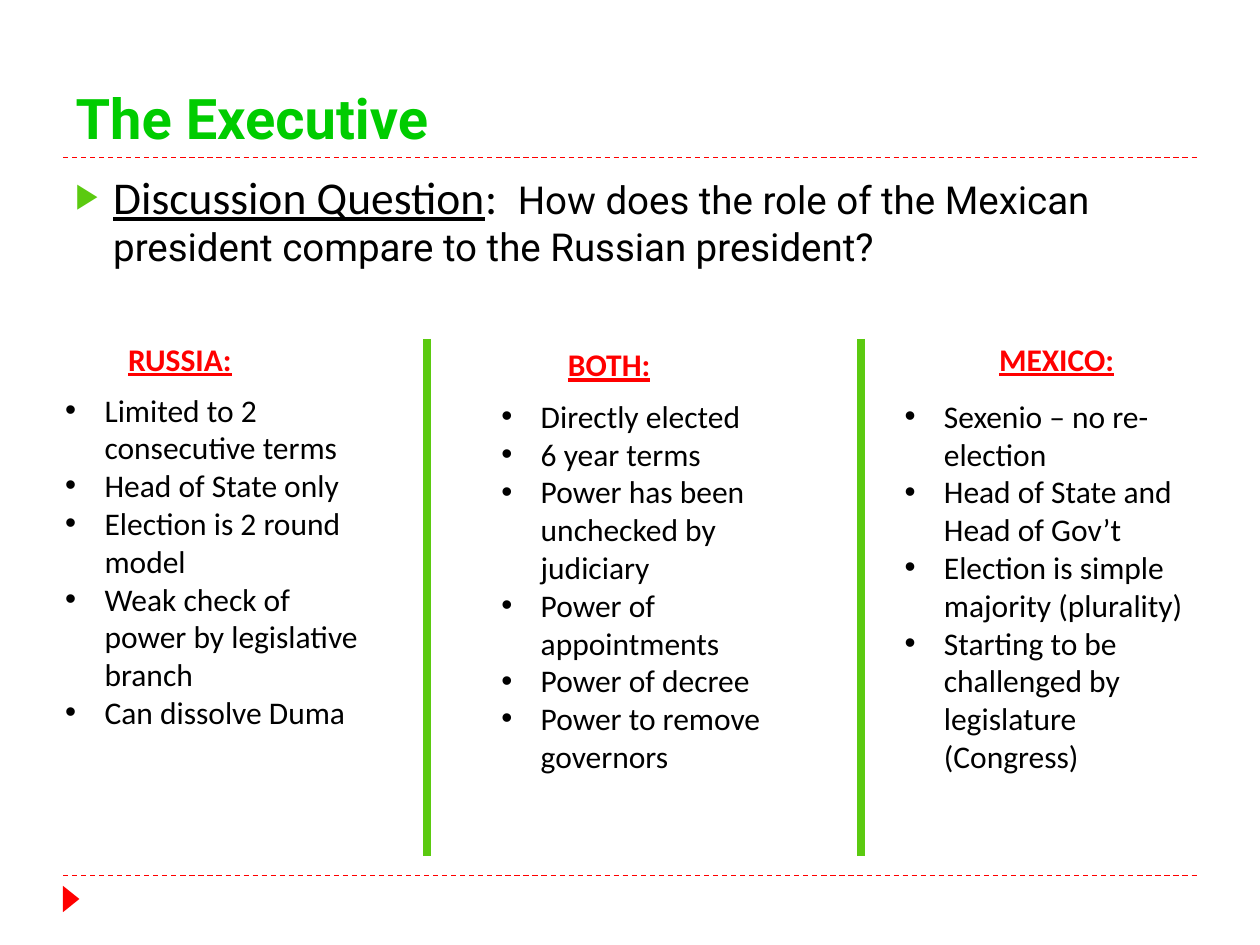
import dataclasses

import lxml.etree
import pptx
import pptx.dml.color
import pptx.enum.dml
import pptx.enum.shapes
import pptx.enum.text
import pptx.oxml.ns
import pptx.util

Pt = pptx.util.Pt
qn = pptx.oxml.ns.qn


@dataclasses.dataclass(frozen=True)
class Theme:
    """Colours, fonts and type sizes of the slide."""
    title: str = "00CC00"
    green: str = "5BCA10"
    red: str = "FF0000"
    ink: str = "000000"
    sans: str = "Calibri"
    head: str = "Roboto"
    big: int = 32
    lead: int = 26
    ask: int = 22
    base: int = 18


def tint(code):
    """Return the colour for a hex code."""
    return pptx.dml.color.RGBColor.from_string(code)


def write(para, text, *, font, size, color, bold=False, under=False):
    """Add a formatted run of text to a paragraph."""
    run = para.add_run()
    run.text = text
    face = run.font
    face.name, face.size = font, Pt(size)
    face.bold, face.underline = bold, under
    face.color.rgb = tint(color)


def indent(para, left, first=0):
    """Set the left and first-line indents of a paragraph."""
    props = para._p.get_or_add_pPr()
    props.set("marL", str(Pt(left)))
    props.set("indent", str(Pt(first)))
    return props


def bullet(para, mark, left, color=None, scale=None):
    """Give a paragraph a hanging bullet."""
    props = indent(para, left, -left)
    if color:
        shade = lxml.etree.SubElement(props, qn("a:buClr"))
        lxml.etree.SubElement(shade, qn("a:srgbClr"), val=color)
    if scale:
        lxml.etree.SubElement(props, qn("a:buSzPct"), val=str(scale * 1000))
    lxml.etree.SubElement(props, qn("a:buFont"), typeface="Arial")
    lxml.etree.SubElement(props, qn("a:buChar"), char=mark)


class Page:
    """Hold the theme and the current slide."""

    def __init__(self, slide, theme):
        """Keep the slide and its theme."""
        self.slide, self.theme = slide, theme

    def title(self, text, *box):
        """Place and format the title."""
        look, shape = self.theme, self.slide.shapes.title
        shape.left, shape.top, shape.width, shape.height = map(Pt, box)
        frame = shape.text_frame
        frame.auto_size = pptx.enum.text.MSO_AUTO_SIZE.NONE
        frame.vertical_anchor = pptx.enum.text.MSO_ANCHOR.BOTTOM
        para = frame.paragraphs[0]
        para.alignment = pptx.enum.text.PP_ALIGN.LEFT
        write(para, text, font=look.head, size=look.big, color=look.title, bold=True)

    def frame(self, *box):
        """Add a wrapping text box and return its frame."""
        frame = self.slide.shapes.add_textbox(*map(Pt, box)).text_frame
        frame.word_wrap = True
        return frame

    def query(self, label, text, *box):
        """Add the question with its underlined label."""
        look = self.theme
        para = self.frame(*box).paragraphs[0]
        para.space_before = Pt(6)
        bullet(para, "▶", 21.6, look.green, 76)
        lead = dict(font=look.sans, size=look.lead, color=look.ink)
        write(para, label, under=True, **lead)
        write(para, ":  ", **lead)
        write(para, text, font=look.head, size=look.ask, color=look.ink)

    def label(self, text, *box):
        """Add an underlined column heading."""
        look = self.theme
        para = self.frame(*box).paragraphs[0]
        indent(para, 36)
        write(para, text, font=look.sans, size=look.base, color=look.red,
              bold=True, under=True)

    def points(self, items, *box):
        """Add a bulleted list."""
        look, frame = self.theme, self.frame(*box)
        for rank, item in enumerate(items):
            para = frame.add_paragraph() if rank else frame.paragraphs[0]
            bullet(para, "•", 22.5)
            write(para, item, font=look.sans, size=look.base, color=look.ink)

    def line(self, ends, color, width, dash=None):
        """Add a straight line."""
        kind = pptx.enum.shapes.MSO_CONNECTOR.STRAIGHT
        rule = self.slide.shapes.add_connector(kind, *map(Pt, ends))
        rule.line.color.rgb = tint(color)
        rule.line.width = Pt(width)
        if dash:
            rule.line.dash_style = dash
        lxml.etree.SubElement(rule._element.spPr, qn("a:effectLst"))

    def arrow(self, color, *box):
        """Add a triangle that points right."""
        kind = pptx.enum.shapes.MSO_SHAPE.ISOSCELES_TRIANGLE
        shape = self.slide.shapes.add_shape(kind, *map(Pt, box))
        shape.rotation = 90
        shape.shadow.inherit = False
        shape.fill.solid()
        shape.fill.fore_color.rgb = tint(color)
        shape.line.fill.background()


COLUMNS = [
    ("RUSSIA:", (30.2, 190.8), (30.2, 219.6, 204), [
        "Limited to 2 consecutive terms",
        "Head of State only",
        "Election is 2 round model",
        "Weak check of power by legislative branch",
        "Can dissolve Duma",
    ]),
    ("BOTH:", (281.5, 193.7), (279.4, 223.2, 225.4), [
        "Directly elected",
        "6 year terms",
        "Power has been unchecked by judiciary",
        "Power of appointments",
        "Power of decree",
        "Power to remove governors",
    ]),
    ("MEXICO:", (527.8, 190.8), (509.8, 223.2, 225.4), [
        "Sexenio – no re-election",
        "Head of State and Head of Gov’t",
        "Election is simple majority (plurality)",
        "Starting to be challenged by legislature (Congress)",
    ]),
]


def main():
    """Build and save the slide."""
    deck = pptx.Presentation()
    deck.slide_width, deck.slide_height = Pt(720), Pt(540)
    look = Theme()
    page = Page(deck.slides.add_slide(deck.slide_layouts[5]), look)
    for y in (500.4, 90):
        page.line((36, y, 684, y), look.red, 0.75, pptx.enum.dml.MSO_LINE.DASH)
    page.arrow(look.red, 33.1, 509, 15.1, 9.4)
    page.title("The Executive", 36, 12.2, 648, 77.8)
    page.query("Discussion Question",
               "How does the role of the Mexican president compare to the Russian president?",
               36, 92.9, 642.2, 97.2)
    for x in (244.1, 491.8):
        page.line((x, 193.7, x, 488.9), look.green, 4.5)
    for name, spot, (left, top, tall), items in COLUMNS:
        page.label(name, *spot, 156.2, 28.8)
        page.points(items, left, top, 192.2, tall)
    deck.save("out.pptx")


if __name__ == "__main__":
    main()
